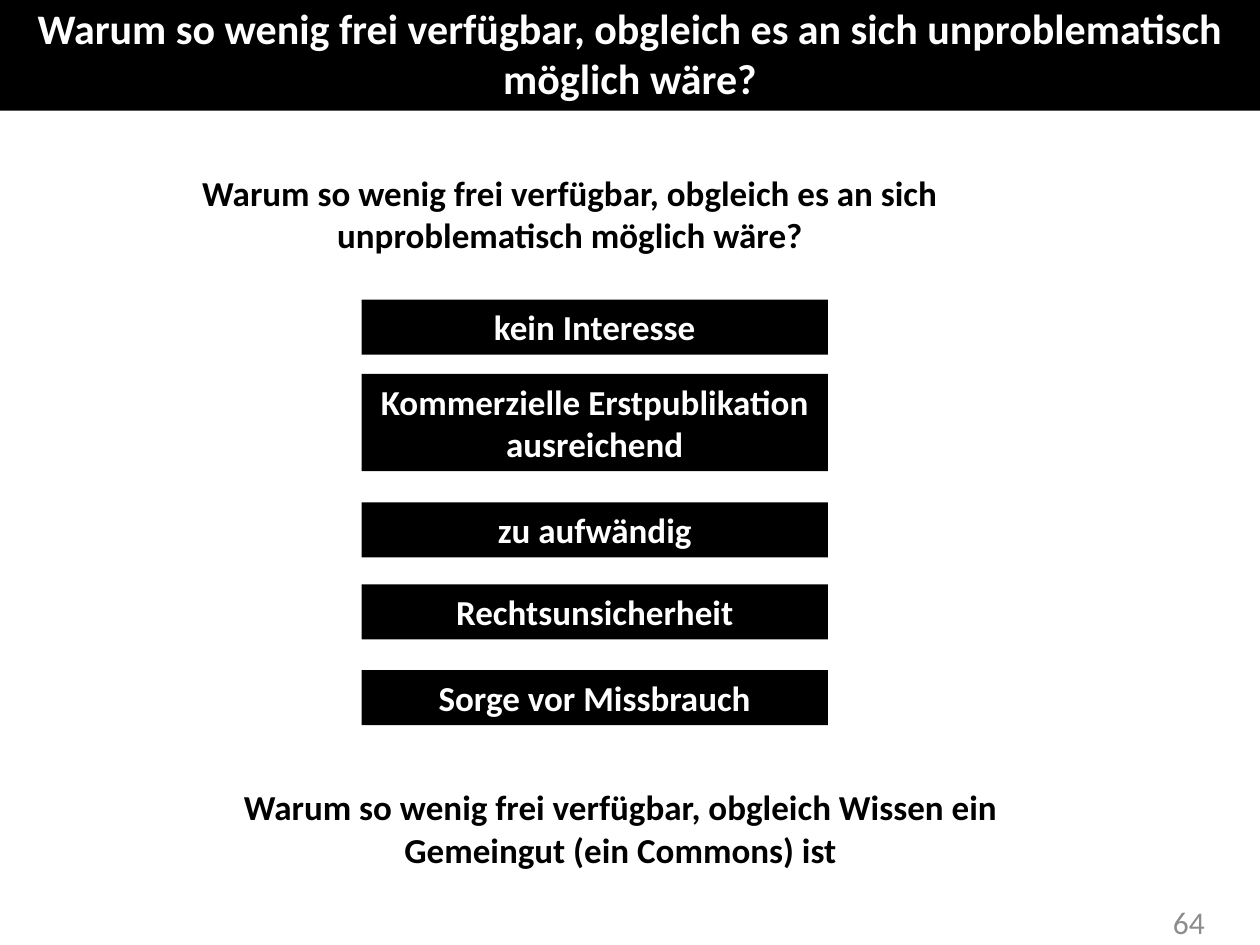
from pptx import Presentation
from pptx.dml.color import RGBColor
from pptx.enum.shapes import MSO_SHAPE
from pptx.enum.text import MSO_ANCHOR, MSO_AUTO_SIZE, PP_ALIGN
from pptx.util import Cm, Pt

RECT = MSO_SHAPE.RECTANGLE
TOP, MIDDLE = MSO_ANCHOR.TOP, MSO_ANCHOR.MIDDLE
GROW, FIXED = MSO_AUTO_SIZE.SHAPE_TO_FIT_TEXT, MSO_AUTO_SIZE.NONE
CENTER, RIGHT = PP_ALIGN.CENTER, PP_ALIGN.RIGHT

BLACK, WHITE, GRAY = "000000", "FFFFFF", "8C8C8C"
TITLE = "Warum so wenig frei verfügbar, obgleich es an sich unproblematisch möglich wäre?"
CLOSE = "Warum so wenig frei verfügbar, obgleich Wissen ein Gemeingut (ein Commons) ist"
# Each reason: text, distance from the top of the stack, height
REASONS = [
    ("kein Interesse", 0, 1.11),
    ("Kommerzielle Erstpublikation ausreichend", 1.5, 1.96),
    ("zu aufwändig", 4.09, 1.11),
    ("Rechtsunsicherheit", 5.74, 1.11),
    ("Sorge vor Missbrauch", 7.47, 1.11),
]


def color(code):
    return RGBColor.from_string(code)


def style(item, values):
    for name, value in values.items():
        setattr(item, name, value)


def write(shape, text, tone, size=20, bold=True, align=CENTER,
          anchor=TOP, fit=GROW):
    frame = shape.text_frame
    style(frame, {"word_wrap": True, "auto_size": fit,
                  "vertical_anchor": anchor})
    para = frame.paragraphs[0]
    para.alignment = align
    run = para.add_run()
    run.text = text
    style(run.font, {"name": "Calibri", "size": Pt(size), "bold": bold})
    run.font.color.rgb = color(tone)


def add_bar(slide, box, text, size=20):
    bar = slide.shapes.add_shape(RECT, *map(Cm, box))
    bar.shadow.inherit = False
    bar.fill.solid()
    bar.fill.fore_color.rgb = color(BLACK)
    bar.line.fill.background()
    write(bar, text, WHITE, size)


def add_note(slide, box, text, tone=BLACK, **look):
    note = slide.shapes.add_textbox(*map(Cm, box))
    write(note, text, tone, **look)


def add_stack(slide, box):
    left, top, width = box
    for text, drop, height in REASONS:
        add_bar(slide, (left, top + drop, width, height), text)


def main():
    deck = Presentation()
    style(deck, {"slide_width": Cm(25.4), "slide_height": Cm(19.05)})
    slide = deck.slides.add_slide(deck.slide_layouts[6])

    # Page number
    add_note(slide, (18.62, 18.08, 5.92, 1.02), "64", GRAY, size=18,
             bold=False, align=RIGHT, anchor=MIDDLE, fit=FIXED)
    # Question, reasons and closing question
    add_note(slide, (2.69, 3.33, 17.6, 1.96), TITLE)
    add_stack(slide, (7.29, 6.04, 9.4))
    add_note(slide, (3.71, 15.72, 17.6, 1.96), CLOSE)
    # Title band
    add_bar(slide, (0, -0.08, 25.4, 2.31), TITLE, 24)

    deck.save("out.pptx")


if __name__ == "__main__":
    main()
